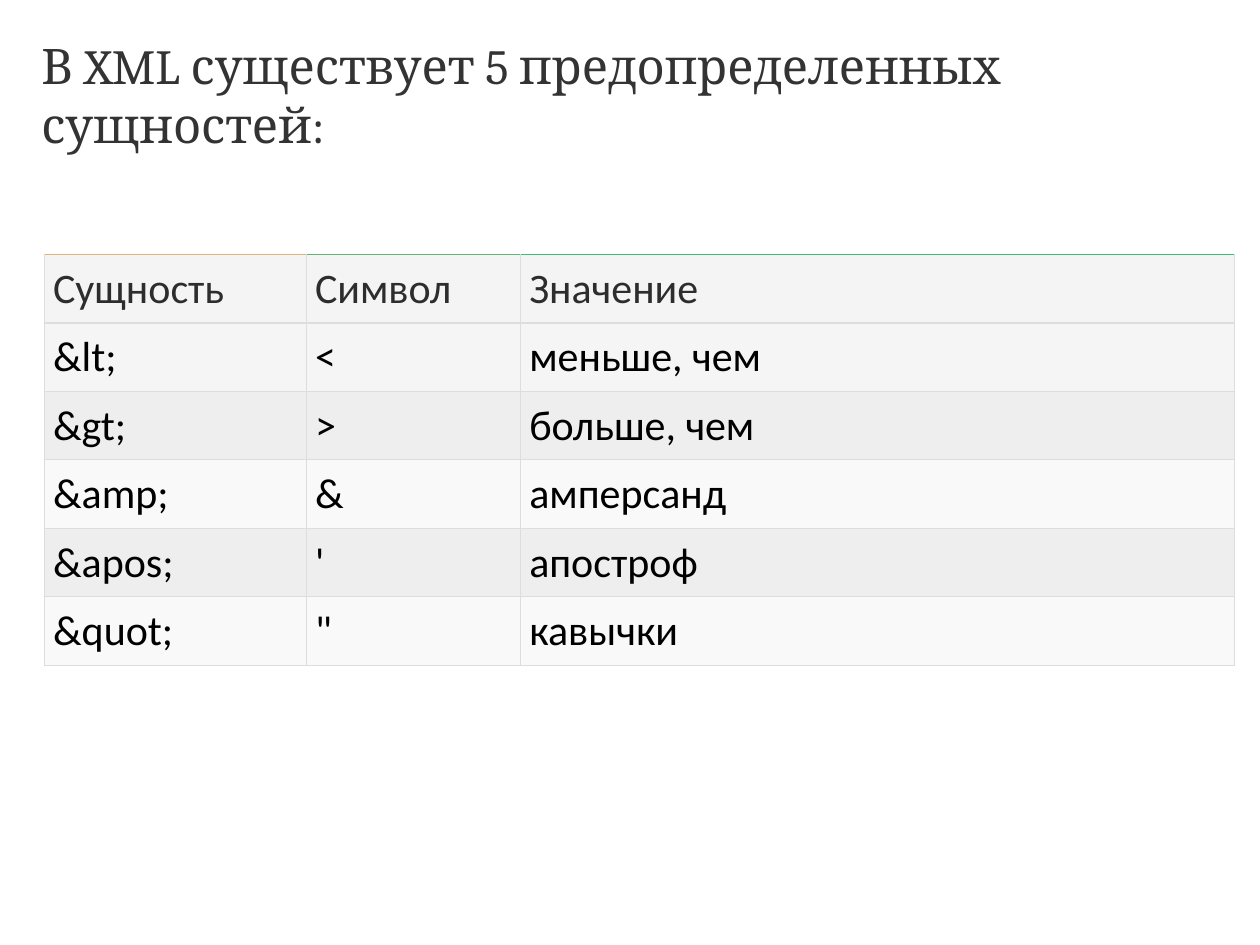
from dataclasses import dataclass

from lxml.etree import SubElement
from pptx import Presentation
from pptx.dml.color import RGBColor
from pptx.enum.text import MSO_ANCHOR as Anchor, MSO_AUTO_SIZE as AutoSize, PP_ALIGN as Align
from pptx.oxml.ns import qn
from pptx.util import Cm, Pt


@dataclass(frozen=True)
class Theme:
    title_font: str = "Cambria"
    table_font: str = "Calibri"
    title_size: int = 28
    table_size: int = 24
    title_color: str = "333333"
    header_color: str = "2D2D2D"
    body_color: str = "000000"
    grid: str = "DDDDDD"
    header_tops: tuple = ("E0B179", "60B379", "40BC79")
    row_fills: tuple = ("F4F4F4", "F5F5F5", "EEEEEE", "F9F9F9", "EEEEEE", "F9F9F9")


THEME = Theme()
TITLE = "В XML существует 5 предопределенных сущностей:"
ENTITIES = [
    ("Сущность", "Символ", "Значение"),
    ("&lt;", "<", "меньше, чем"),
    ("&gt;", ">", "больше, чем"),
    ("&amp;", "&", "амперсанд"),
    ("&apos;", "'", "апостроф"),
    ("&quot;", '"', "кавычки"),
]
COLUMN_SHARES = (0.22, 0.18, 0.6)


def write(frame, text, *, font, size, color, align=Align.LEFT):
    paragraph = frame.paragraphs[0]
    paragraph.alignment = align
    run = paragraph.add_run()
    run.text = text
    run.font.name = font
    run.font.size = Pt(size)
    run.font.color.rgb = RGBColor.from_string(color)


def set_borders(cell, top):
    """Rule all four sides of a cell; the fill must be set afterwards."""
    properties = cell._tc.get_or_add_tcPr()
    for side, color in (("L", THEME.grid), ("R", THEME.grid), ("T", top), ("B", THEME.grid)):
        line = SubElement(properties, qn(f"a:ln{side}"), w=str(Pt(0.75)))
        fill = SubElement(line, qn("a:solidFill"))
        SubElement(fill, qn("a:srgbClr"), val=color)


def add_title(slide, left, top, width, height):
    title = slide.shapes.title
    title.left, title.top, title.width, title.height = left, top, width, height
    frame = title.text_frame
    frame.word_wrap = True
    frame.auto_size = AutoSize.SHAPE_TO_FIT_TEXT
    frame.vertical_anchor = Anchor.MIDDLE
    write(frame, TITLE, font=THEME.title_font, size=THEME.title_size, color=THEME.title_color)


def add_entity_table(slide, left, top, width, height):
    table = slide.shapes.add_table(
        len(ENTITIES), len(COLUMN_SHARES), left, top, width, height).table
    for column, share in zip(table.columns, COLUMN_SHARES):
        column.width = int(width * share)
    for row, entity in enumerate(ENTITIES):
        is_header = row == 0
        for col, text in enumerate(entity):
            cell = table.cell(row, col)
            cell.margin_left = cell.margin_right = Cm(0.18)
            cell.margin_top = cell.margin_bottom = Cm(0.18)
            cell.vertical_anchor = Anchor.BOTTOM if is_header else Anchor.TOP
            set_borders(cell, THEME.header_tops[col] if is_header else THEME.grid)
            cell.fill.solid()
            cell.fill.fore_color.rgb = RGBColor.from_string(THEME.row_fills[row])
            write(cell.text_frame, text, font=THEME.table_font, size=THEME.table_size,
                  color=THEME.header_color if is_header else THEME.body_color)


def main():
    deck = Presentation()
    deck.slide_width, deck.slide_height = Cm(25.4), Cm(19.05)
    slide = deck.slides.add_slide(deck.slide_layouts.get_by_name("Title Only"))
    add_title(slide, Cm(0.58), Cm(1.17), Cm(24.82), Cm(1.45))
    add_entity_table(slide, Cm(0.89), Cm(5.13), Cm(24), Cm(8.28))
    deck.save("out.pptx")


if __name__ == "__main__":
    main()
